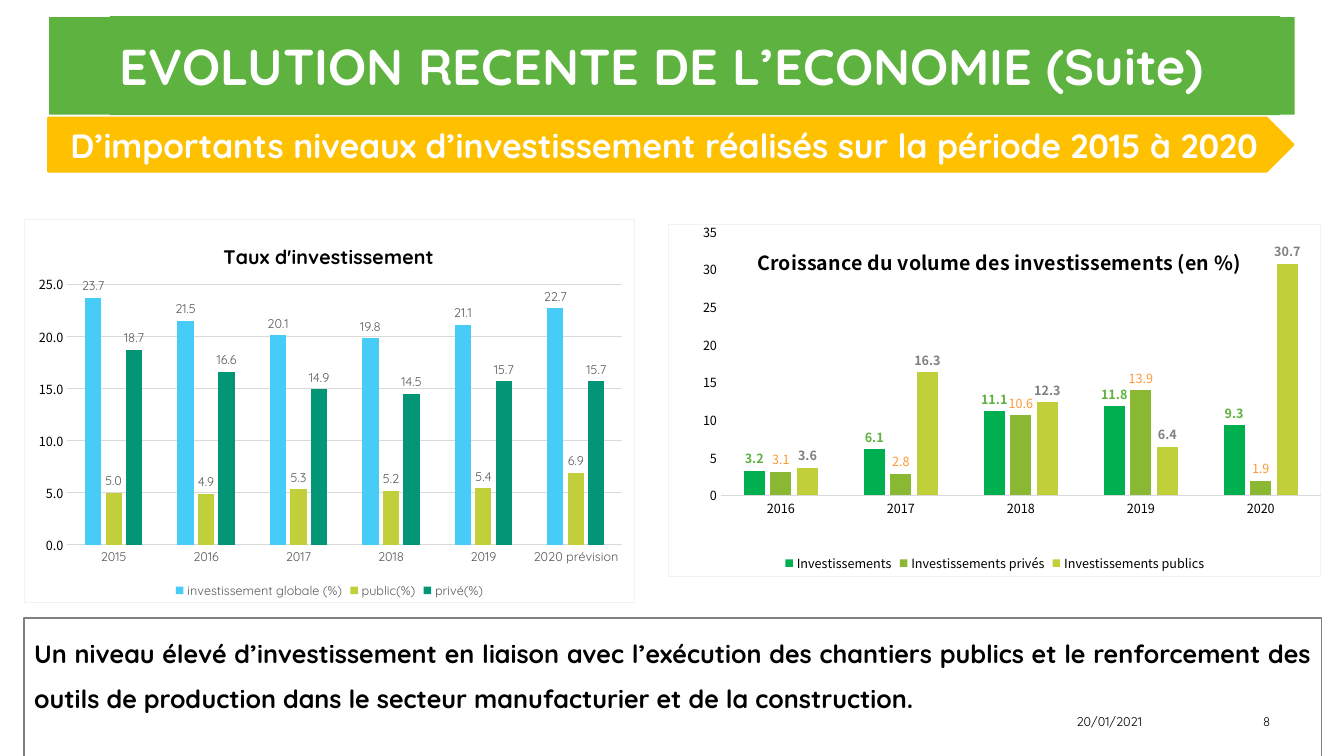
from lxml import etree
from pptx import Presentation
from pptx.chart.data import CategoryChartData
from pptx.dml.color import RGBColor
from pptx.enum.chart import (XL_CHART_TYPE, XL_LABEL_POSITION,
                             XL_LEGEND_POSITION, XL_TICK_MARK)
from pptx.enum.shapes import MSO_SHAPE
from pptx.enum.text import MSO_ANCHOR, PP_ALIGN
from pptx.oxml import parse_xml
from pptx.oxml.ns import nsdecls, qn
from pptx.util import Cm, Pt

RECT, PLATE = MSO_SHAPE.RECTANGLE, MSO_SHAPE.PENTAGON
LEFT, MID, RIGHT, JUST = (PP_ALIGN.LEFT, PP_ALIGN.CENTER,
                          PP_ALIGN.RIGHT, PP_ALIGN.JUSTIFY)
TOP, MIDDLE = MSO_ANCHOR.TOP, MSO_ANCHOR.MIDDLE
COLUMN = XL_CHART_TYPE.COLUMN_CLUSTERED
OUTER = XL_LABEL_POSITION.OUTSIDE_END
BOTTOM = XL_LEGEND_POSITION.BOTTOM
NO_TICK = XL_TICK_MARK.NONE

WHITE = RGBColor(0xFF, 0xFF, 0xFF)
BLACK = RGBColor(0, 0, 0)
GREEN = RGBColor(0x5E, 0xB2, 0x40)
AMBER = RGBColor(0xFF, 0xC0, 0)
GREY = RGBColor(0x80, 0x80, 0x80)
SLATE = RGBColor(0x59, 0x59, 0x59)
SILVER = RGBColor(0xD9, 0xD9, 0xD9)
SKY = RGBColor(0x46, 0xCC, 0xF6)
LIME = RGBColor(0xC0, 0xCF, 0x3A)
TEAL = RGBColor(0x02, 0x96, 0x76)
LEAF = RGBColor(0, 0xB0, 0x50)
MOSS = RGBColor(0x8A, 0xB8, 0x33)
ORANGE = RGBColor(0xFF, 0x99, 0x33)

QUICK, NOTO = "Quicksand", "Noto Sans CJK KR"


def style(font, size, color, name, bold=False):
    font.size, font.name, font.bold = Pt(size), name, bold
    font.color.rgb = color


def place(part, index, inner=False, **spots):
    """Give a chart part a manual layout, in shares of the chart."""
    for old in part.findall(qn("c:layout")):
        part.remove(old)
    layout = parse_xml(f"<c:layout {nsdecls('c')}/>")
    manual = etree.SubElement(layout, qn("c:manualLayout"))
    if inner:
        etree.SubElement(manual, qn("c:layoutTarget")).set("val", "inner")
    for side in "xy":
        etree.SubElement(manual, qn(f"c:{side}Mode")).set("val", "edge")
    for key, share in spots.items():
        etree.SubElement(manual, qn(f"c:{key}")).set("val", str(share))
    part.insert(index, layout)


class Deck:
    def __init__(self):
        self.show = Presentation()
        self.show.slide_width, self.show.slide_height = Cm(33.87), Cm(19.05)
        self.slide = self.show.slides.add_slide(self.show.slide_layouts[6])

    def shape(self, kind, box, fill=None, line=None, width=1):
        shape = self.slide.shapes.add_shape(kind, *map(Cm, box))
        shape.shadow.inherit = False
        for paint, color in ((shape.fill, fill), (shape.line.fill, line)):
            if color is None:
                paint.background()
            else:
                paint.solid()
                paint.fore_color.rgb = color
        if line is not None:
            shape.line.width = Pt(width)
        return shape

    def label(self, shape, text, size, color, bold=True, align=LEFT,
              anchor=MIDDLE, space=1.0):
        frame = shape.text_frame
        frame.word_wrap = True
        frame.vertical_anchor = anchor
        para = frame.paragraphs[0]
        para.alignment, para.line_spacing = align, space
        run = para.add_run()
        run.text = text
        style(run.font, size, color, bold=bold, name=QUICK)

    def note(self, box, text):
        shape = self.slide.shapes.add_textbox(*map(Cm, box))
        self.label(shape, text, 9, BLACK, bold=False, align=RIGHT)

    def chart(self, box, title, cats, rows, face, ink, top, fmt, head, plot):
        """rows: name, values, fill, label colour, label bold."""
        data = CategoryChartData()
        data.categories = cats
        for name, values, *_ in rows:
            data.add_series(name, values)
        chart = self.slide.shapes.add_chart(
            COLUMN, *map(Cm, box), data).chart
        style(chart.font, 10, BLACK, QUICK)
        self.title(chart, title, face, head)
        self.axes(chart, face, ink, top, fmt)
        self.bars(chart, rows, face, fmt)
        chart.has_legend = True
        chart.legend.position = BOTTOM
        chart.legend.include_in_layout = False
        style(chart.legend.font, 9, ink, face)
        root = chart.element.find(qn("c:chart"))
        place(root.find(qn("c:plotArea")), 0, True,
              **dict(zip("xywh", plot)))
        root.addnext(parse_xml(
            f'<c:spPr {nsdecls("c", "a")}><a:noFill/><a:ln w="9525">'
            '<a:solidFill><a:srgbClr val="F2F2F2"/></a:solidFill>'
            '</a:ln></c:spPr>'))
        return chart

    def title(self, chart, text, face, head):
        chart.has_title = True
        run = chart.chart_title.text_frame.paragraphs[0].add_run()
        run.text = text
        style(run.font, 14, BLACK, face, True)
        block = chart.element.find(qn("c:chart")).find(qn("c:title"))
        place(block, 1, **dict(zip("xy", head)))

    def axes(self, chart, face, ink, top, fmt):
        cat, val = chart.category_axis, chart.value_axis
        for axis, color, name in ((cat, ink, face), (val, BLACK, NOTO)):
            axis.major_tick_mark = axis.minor_tick_mark = NO_TICK
            style(axis.tick_labels.font, 9, color, name)
        cat.format.line.color.rgb = SILVER
        cat.format.line.width = Pt(0.75)
        val.format.line.fill.background()
        val.has_major_gridlines = False
        val.minimum_scale, val.maximum_scale, val.major_unit = 0, top, 5
        val.tick_labels.number_format = fmt
        val.tick_labels.number_format_is_linked = False

    def bars(self, chart, rows, face, fmt):
        plot = chart.plots[0]
        plot.gap_width, plot.overlap = 219, -27
        plot.vary_by_categories = False
        for bar, (_, _, fill, color, bold) in zip(plot.series, rows):
            bar.format.fill.solid()
            bar.format.fill.fore_color.rgb = fill
            labels = bar.data_labels
            labels.show_value = True
            labels.position = OUTER
            labels.number_format = fmt
            labels.number_format_is_linked = False
            style(labels.font, 9, color, face, bold)


def main():
    deck = Deck()
    deck.shape(RECT, (1.24, 0.43, 31.39, 2.46), GREEN)
    deck.note((21.13, 17.68, 7.9, 1.02), "20/01/2021")
    deck.note((29.34, 17.68, 2.92, 1.02), "8")
    head = deck.shape(RECT, (2.77, 0.41, 29.49, 2.49), GREEN)
    deck.label(head, "EVOLUTION RECENTE DE L’ECONOMIE (Suite)", 36, WHITE)
    arrow = deck.shape(PLATE, (1.22, 2.97, 31.37, 1.35), AMBER, AMBER, 1.75)
    deck.label(arrow, "D’importants niveaux d’investissement réalisés "
               "sur la période 2015 à 2020", 24, WHITE, align=MID)

    years = ["2015", "2016", "2017", "2018", "2019", "2020 prévision"]
    rates = [
        ("investissement globale (%)", (23.7, 21.5, 20.1, 19.8, 21.1, 22.7),
         SKY, SLATE, False),
        ("public(%)", (5, 4.9, 5.3, 5.2, 5.4, 6.9), LIME, SLATE, False),
        ("privé(%)", (18.7, 16.6, 14.9, 14.5, 15.7, 15.7),
         TEAL, SLATE, False)]
    chart = deck.chart((0.61, 5.51, 15.39, 9.68), "Taux d'investissement",
                       years, rates, QUICK, SLATE, 25, "#,##0.0",
                       (0.32, 0.05), (0.07, 0.17, 0.91, 0.68))
    grid = chart.value_axis.major_gridlines.format.line
    grid.color.rgb, grid.width = SILVER, Pt(0.75)

    base = deck.shape(RECT, (0.61, 15.57, 32.69, 3.71), line=GREY)
    deck.label(base, "Un niveau élevé d’investissement en liaison avec "
               "l’exécution des chantiers publics et le renforcement des "
               "outils de production dans le secteur manufacturier et de "
               "la construction.", 18, BLACK, align=JUST, anchor=TOP,
               space=1.5)

    growth = [
        ("Investissements", (3.2, 6.1, 11.1, 11.8, 9.3), LEAF, GREEN, True),
        ("Investissements privés", (3.1, 2.8, 10.6, 13.9, 1.9),
         MOSS, ORANGE, False),
        ("Investissements publics", (3.6, 16.3, 12.3, 6.4, 30.7),
         LIME, GREY, True)]
    deck.chart((16.84, 5.61, 16.46, 8.92),
               "Croissance du volume des investissements (en %)",
               ["2016", "2017", "2018", "2019", "2020"], growth, NOTO, BLACK,
               35, "General", (0.13, 0.05), (0.08, 0.02, 0.92, 0.75))
    deck.show.save("out.pptx")


if __name__ == "__main__":
    main()
